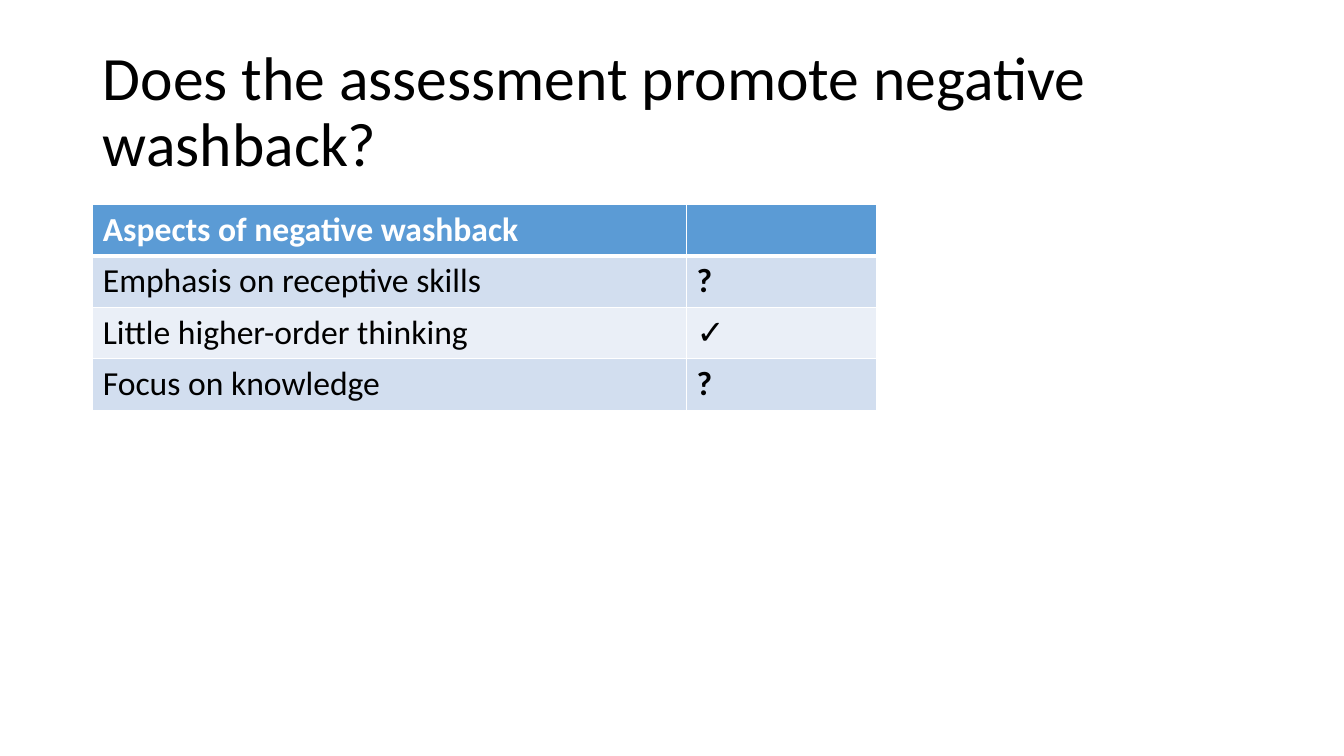
from lxml import etree
from pptx import Presentation
from pptx.dml.color import RGBColor
from pptx.enum.text import MSO_ANCHOR, PP_ALIGN
from pptx.oxml.ns import qn
from pptx.util import Inches, Pt

MIDDLE = MSO_ANCHOR.MIDDLE
LEFT = PP_ALIGN.LEFT
FONT = "Calibri"
COLORS = {
    "text": "000000",
    "header": "5B9BD5",
    "header_text": "FFFFFF",
    "odd_row": "D2DEEF",
    "even_row": "EAEFF7",
    "border": "FFFFFF",
}
MARGIN = Inches(0.92)
COLUMN_WIDTHS = [Inches(5.89), Inches(1.88)]
ROW_HEIGHT = Inches(0.51)
ASPECTS = [
    ("Aspects of negative washback", ""),
    ("Emphasis on receptive skills", "?"),
    ("Little higher-order thinking", "✓"),
    ("Focus on knowledge", "?"),
]


def format_text(font, size, color, bold=False):
    font.name = FONT
    font.size = Pt(size)
    font.bold = bold
    font.color.rgb = RGBColor.from_string(COLORS[color])


def add_borders(cell, widths):
    properties = cell._tc.get_or_add_tcPr()
    for position, (side, width) in enumerate(widths.items()):
        border = etree.Element(qn(f"a:ln{side}"), w=str(Pt(width)))
        fill = etree.SubElement(border, qn("a:solidFill"))
        etree.SubElement(fill, qn("a:srgbClr"), val=COLORS["border"])
        properties.insert(position, border)


prs = Presentation()
prs.slide_width = Inches(13.33)
prs.slide_height = Inches(7.5)
slide = prs.slides.add_slide(prs.slide_layouts[5])

title = slide.shapes.title
title.left, title.top = MARGIN, Inches(0.4)
title.width, title.height = prs.slide_width - 2 * MARGIN, Inches(1.45)
title.text_frame.text = "Does the assessment promote negative washback?"
title.text_frame.word_wrap = True
title.text_frame.vertical_anchor = MIDDLE
heading = title.text_frame.paragraphs[0]
heading.alignment = LEFT
heading.line_spacing = 0.9
format_text(heading.runs[0].font, 44, "text")

washback = slide.shapes.add_table(
    len(ASPECTS), len(COLUMN_WIDTHS), MARGIN, Inches(2.03),
    sum(COLUMN_WIDTHS), ROW_HEIGHT * len(ASPECTS),
).table
for column, width in zip(washback.columns, COLUMN_WIDTHS):
    column.width = width

for row, aspect in enumerate(ASPECTS):
    is_header = row == 0
    band = "header" if is_header else "odd_row" if row % 2 else "even_row"
    for col, wording in enumerate(aspect):
        cell = washback.cell(row, col)
        cell.text_frame.text = wording
        paragraph = cell.text_frame.paragraphs[0]
        font = paragraph.runs[0].font if wording else paragraph.font
        format_text(font, 24, "header_text" if is_header else "text",
                    is_header or wording == "?")
        cell.fill.solid()
        cell.fill.fore_color.rgb = RGBColor.from_string(COLORS[band])
        add_borders(cell, {"L": 1, "R": 1, "T": 3 if row == 1 else 1,
                           "B": 3 if is_header else 1})

prs.save("out.pptx")
